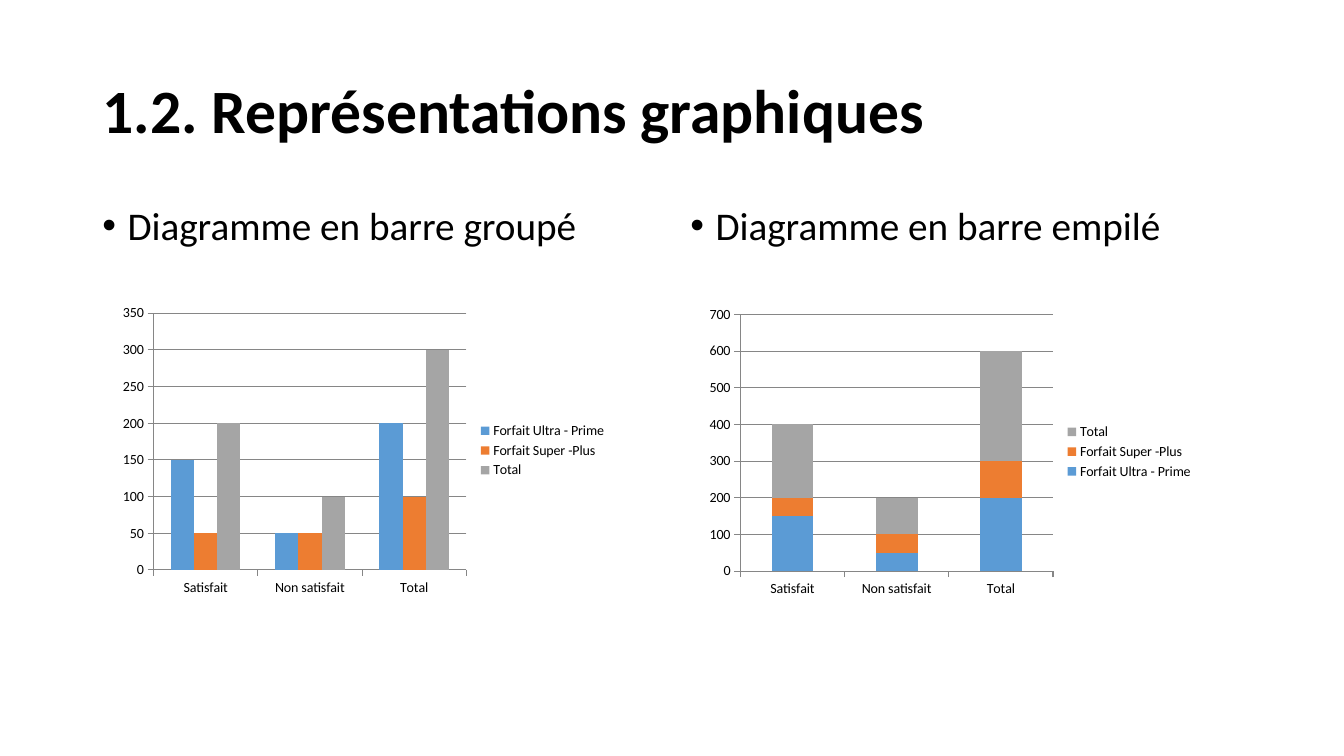
from lxml.etree import SubElement
from pptx import Presentation
from pptx.chart.data import CategoryChartData
from pptx.dml.color import RGBColor
from pptx.enum.chart import XL_CHART_TYPE as ChartType
from pptx.enum.chart import XL_LEGEND_POSITION as LegendPosition
from pptx.enum.chart import XL_TICK_MARK as TickMark
from pptx.enum.text import MSO_ANCHOR, PP_ALIGN
from pptx.oxml.ns import qn
from pptx.util import Pt

COLORS = {
    "text": "000000",
    "axis": "868686",
    "Forfait Ultra - Prime": "5B9BD5",
    "Forfait Super -Plus": "ED7D31",
    "Total": "A5A5A5",
}
FONT = "Calibri"
CATEGORIES = ["Satisfait", "Non satisfait", "Total"]
SERIES = {
    "Forfait Ultra - Prime": [150, 50, 200],
    "Forfait Super -Plus": [50, 50, 100],
    "Total": [200, 100, 300],
}


def color(name):
    return RGBColor.from_string(COLORS[name])


def style_font(font, size, bold=False):
    font.name = FONT
    font.size = Pt(size)
    font.bold = bold
    font.color.rgb = color("text")


def place_title(slide, text, left, top, width, height):
    title = slide.shapes.title
    title.left, title.top, title.width, title.height = map(Pt, (left, top, width, height))
    frame = title.text_frame
    frame.text = text
    frame.vertical_anchor = MSO_ANCHOR.MIDDLE
    paragraph = frame.paragraphs[0]
    paragraph.alignment = PP_ALIGN.LEFT
    paragraph.line_spacing = 0.9
    style_font(paragraph.font, 44, bold=True)


def add_heading(slide, text, left, top, width, height):
    box = slide.shapes.add_textbox(Pt(left), Pt(top), Pt(width), Pt(height))
    frame = box.text_frame
    frame.word_wrap = True
    paragraph = frame.paragraphs[0]
    paragraph.text = text
    paragraph.line_spacing = 0.9
    properties = paragraph._p.get_or_add_pPr()
    properties.set("marL", str(Pt(18)))
    properties.set("indent", str(-Pt(18)))
    SubElement(properties, qn("a:buFont")).set("typeface", "Arial")
    SubElement(properties, qn("a:buChar")).set("char", "•")
    style_font(paragraph.font, 28)


def style_axis(axis):
    axis.major_tick_mark = TickMark.OUTSIDE
    axis.minor_tick_mark = TickMark.NONE
    axis.format.line.color.rgb = color("axis")
    axis.format.line.width = Pt(0.75)


def add_bar_chart(slide, chart_type, overlap, step, left, top, width, height):
    data = CategoryChartData()
    data.categories = CATEGORIES
    for name, values in SERIES.items():
        data.add_series(name, values)
    chart = slide.shapes.add_chart(
        chart_type, Pt(left), Pt(top), Pt(width), Pt(height), data
    ).chart
    style_font(chart.font, 10)
    chart.has_title = False
    chart.has_legend = True
    chart.legend.position = LegendPosition.RIGHT
    chart.legend.include_in_layout = False

    plot = chart.plots[0]
    plot.vary_by_categories = False
    plot.gap_width = 150
    plot.overlap = overlap
    for series in plot.series:
        series.format.fill.solid()
        series.format.fill.fore_color.rgb = color(series.name)

    style_axis(chart.category_axis)
    value_axis = chart.value_axis
    style_axis(value_axis)
    value_axis.minimum_scale = 0
    value_axis.maximum_scale = 7 * step
    value_axis.major_unit = step
    value_axis.has_major_gridlines = True
    gridline = value_axis.major_gridlines.format.line
    gridline.color.rgb = color("axis")
    gridline.width = Pt(0.75)


def add_column(slide, heading, chart_type, overlap, step, chart_offset, left, top, width, height):
    add_heading(slide, heading, left, top, width, height)
    inset_left, inset_top = chart_offset
    add_bar_chart(slide, chart_type, overlap, step, left + inset_left, top + inset_top, 360, 216)


def main():
    presentation = Presentation()
    presentation.slide_width = Pt(960)
    presentation.slide_height = Pt(540)
    slide = presentation.slides.add_slide(presentation.slide_layouts[5])
    place_title(slide, "1.2. Représentations graphiques", 66, 28.75, 828, 104.4)
    add_column(slide, "Diagramme en barre groupé", ChartType.COLUMN_CLUSTERED, 0, 50,
               (14.6, 69.8), 66, 144, 408, 342.6)
    add_column(slide, "Diagramme en barre empilé", ChartType.COLUMN_STACKED, 100, 100,
               (13.7, 70.6), 486, 144, 408, 342.6)
    presentation.save("out.pptx")


if __name__ == "__main__":
    main()
